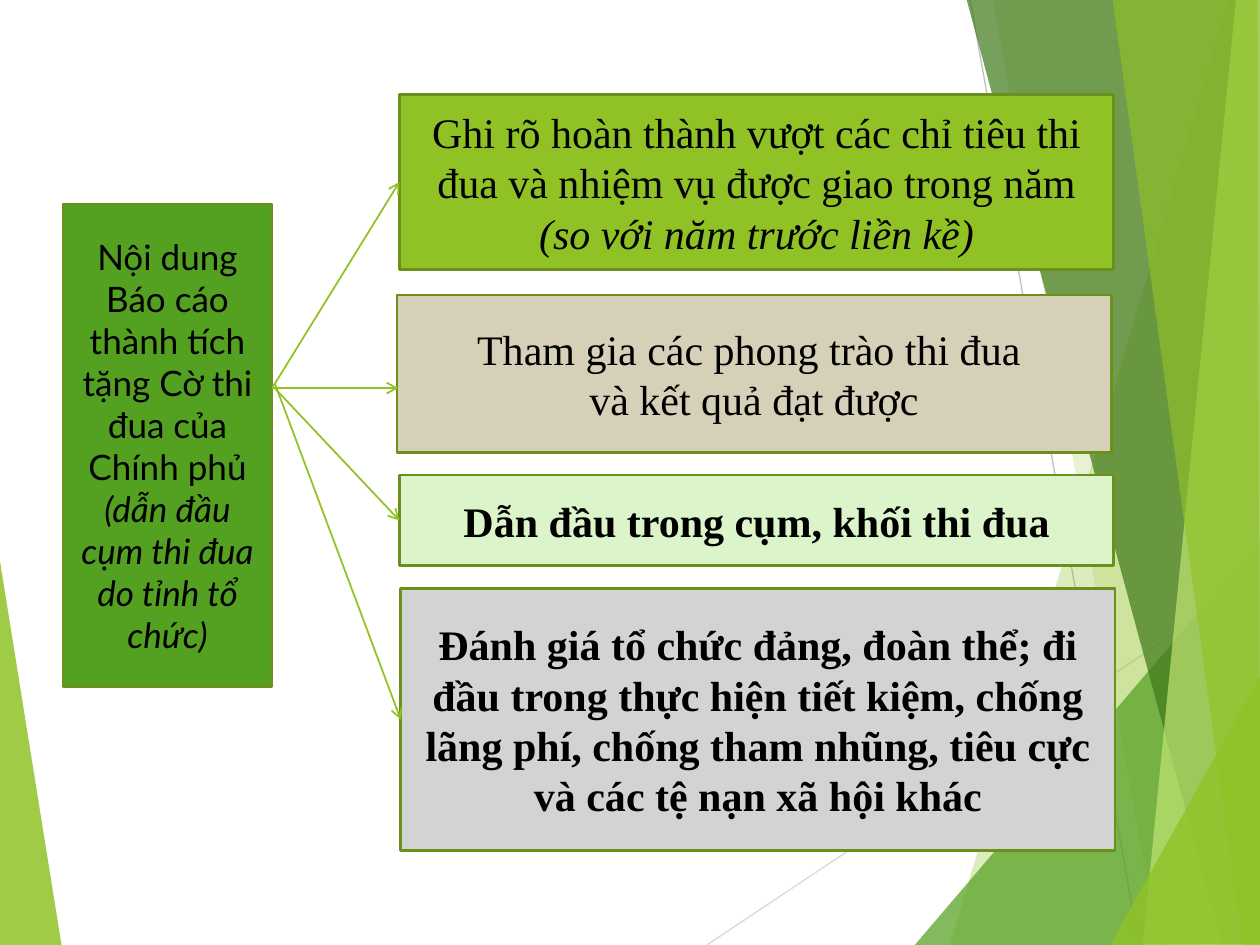
"""Build a slide linking an award report to its four required contents."""
from typing import NamedTuple

import lxml.etree
import pptx
import pptx.dml.color
import pptx.enum.shapes
import pptx.enum.text
import pptx.oxml.ns
import pptx.util
from pptx.util import Inches

GREEN = "90C226"
OUTLINE = "6B901C"
SERIF = "Times New Roman"


class Facet(NamedTuple):
    points: list[tuple[float, float]]
    color: str
    opacity: int


class Line(NamedTuple):
    start: tuple[float, float]
    end: tuple[float, float]
    color: str
    width: float


class Box(NamedTuple):
    at: tuple[float, float, float, float]
    fill: str
    paragraphs: list[list[tuple[str, dict]]]
    font: dict


class Arrow(NamedTuple):
    start: tuple[float, float]
    end: tuple[float, float]
    target: int
    joined: bool = True


LEFT_FACET = Facet([(-0.01, 4.39), (0.49, 7.51), (-0.01, 7.5)], GREEN, 85)
RAYS = [
    Line((5.61, 7.5), (10.01, 4.57), "D9D9D9", 0.75),
    Line((7.7, 0), (9.04, 7.5), "BFBFBF", 0.75),
]
RIGHT_FACETS = [
    Facet([(9.75, 0), (7.54, 7.5), (10.02, 7.51), (10.01, 0.01)], GREEN, 30),
    Facet([(7.88, -0.01), (9.19, 7.5), (10.01, 7.5), (10.01, -0.01)], GREEN, 20),
    Facet([(7.26, 7.5), (10, 4.29), (10.01, 7.5)], "54A021", 72),
    Facet([(7.67, -0.01), (9.7, 7.5), (10.01, 7.49), (10.01, -0.01)], "3F7819", 70),
    Facet([(9.81, -0.01), (9.07, 7.5), (10.01, 7.5), (10, -0.01)], "C0E474", 70),
    Facet([(8.83, -0.01), (9.86, 7.5), (10, 7.5), (9.98, -0.01)], GREEN, 65),
    Facet([(8.81, 7.5), (10.01, 5.35), (10.01, 7.49)], GREEN, 80),
]

ITALIC = {"italic": True}
PLAIN_ITEM = {"name": SERIF, "size": pptx.util.Pt(24)}
BOLD_ITEM = PLAIN_ITEM | {"bold": True}
BOXES = [
    Box((0.5, 1.62, 1.66, 3.83), "54A021",
        [[("Nội dung Báo cáo thành tích tặng Cờ thi đua của Chính phủ ", {}),
          ("(dẫn đầu cụm thi đua do tỉnh tổ chức)", ITALIC)]],
        {"name": "Lato", "size": pptx.util.Pt(20)}),
    Box((3.17, 0.75, 5.67, 1.39), GREEN,
        [[("Ghi rõ hoàn thành vượt các chỉ tiêu thi đua và nhiệm vụ được giao trong năm ", {}),
          ("(so với năm trước liền kề)", ITALIC)]],
        PLAIN_ITEM),
    Box((3.15, 2.34, 5.67, 1.25), "D6D0B8",
        [[("Tham gia các phong trào thi đua ", {})], [("và kết quả đạt được", {})]],
        PLAIN_ITEM),
    Box((3.17, 3.77, 5.67, 0.72), "DBF4CA",
        [[("Dẫn đầu trong cụm, khối thi đua", {})]], BOLD_ITEM),
    Box((3.18, 4.67, 5.67, 2.08), "D3D3D3",
        [[("Đánh giá tổ chức đảng, đoàn thể; đi đầu trong thực hiện tiết kiệm, chống "
           "lãng phí, chống tham nhũng, tiêu cực và các tệ nạn xã hội khác", {})]],
        BOLD_ITEM),
]
ARROWS = [
    Arrow((2.16, 3.08), (3.17, 1.45), 1),
    Arrow((2.16, 3.08), (3.16, 3.08), 2, joined=False),
    Arrow((2.18, 3.08), (3.17, 4.13), 3),
    Arrow((2.18, 3.04), (3.18, 5.71), 4),
]


def rgb(color: str) -> pptx.dml.color.RGBColor:
    return pptx.dml.color.RGBColor.from_string(color)


def add_child(parent, tag: str, **attrs: str):
    return lxml.etree.SubElement(parent, pptx.oxml.ns.qn(tag), attrs)


def set_fill(sp, color: str) -> None:
    sp.shadow.inherit = False
    sp.fill.solid()
    sp.fill.fore_color.rgb = rgb(color)


def draw_facet(s, facet: Facet) -> None:
    start, *rest = [(Inches(x), Inches(y)) for x, y in facet.points]
    builder = s.shapes.build_freeform(*start)
    builder.add_line_segments(rest, close=True)
    sp = builder.convert_to_shape()
    set_fill(sp, facet.color)
    sp.line.fill.background()
    color = sp._element.spPr.find(".//" + pptx.oxml.ns.qn("a:srgbClr"))
    add_child(color, "a:alpha", val=str(facet.opacity * 1000))


def draw_line(s, line: Line):
    ends = [Inches(v) for v in line.start + line.end]
    cxn = s.shapes.add_connector(pptx.enum.shapes.MSO_CONNECTOR.STRAIGHT, *ends)
    cxn.line.color.rgb = rgb(line.color)
    cxn.line.width = pptx.util.Pt(line.width)
    add_child(cxn._element.spPr, "a:effectLst")
    return cxn


def draw_box(s, box: Box):
    sp = s.shapes.add_shape(pptx.enum.shapes.MSO_SHAPE.RECTANGLE, *map(Inches, box.at))
    set_fill(sp, box.fill)
    sp.line.color.rgb = rgb(OUTLINE)
    sp.line.width = pptx.util.Pt(1.5)
    tf = sp.text_frame
    tf.word_wrap = True
    tf.vertical_anchor = pptx.enum.text.MSO_ANCHOR.MIDDLE
    for i, runs in enumerate(box.paragraphs):
        p = tf.add_paragraph() if i else tf.paragraphs[0]
        p.alignment = pptx.enum.text.PP_ALIGN.CENTER
        for text, extra in runs:
            r = p.add_run()
            r.text = text
            r.font.color.rgb = rgb("000000")
            for name, value in (box.font | extra).items():
                setattr(r.font, name, value)
    return sp


def draw_arrow(s, arrow: Arrow, boxes: list) -> None:
    cxn = draw_line(s, Line(arrow.start, arrow.end, GREEN, 1))
    add_child(cxn.line._get_or_add_ln(), "a:tailEnd", type="arrow")
    if arrow.joined:
        cxn.end_connect(boxes[arrow.target], 1)


def main() -> None:
    prs = pptx.Presentation()
    prs.slide_width, prs.slide_height = Inches(10), Inches(7.5)
    s = prs.slides.add_slide(prs.slide_layouts[6])
    draw_facet(s, LEFT_FACET)
    for ray in RAYS:
        draw_line(s, ray)
    for facet in RIGHT_FACETS:
        draw_facet(s, facet)
    boxes = [draw_box(s, box) for box in BOXES]
    for arrow in ARROWS:
        draw_arrow(s, arrow, boxes)
    prs.save("out.pptx")


if __name__ == "__main__":
    main()
